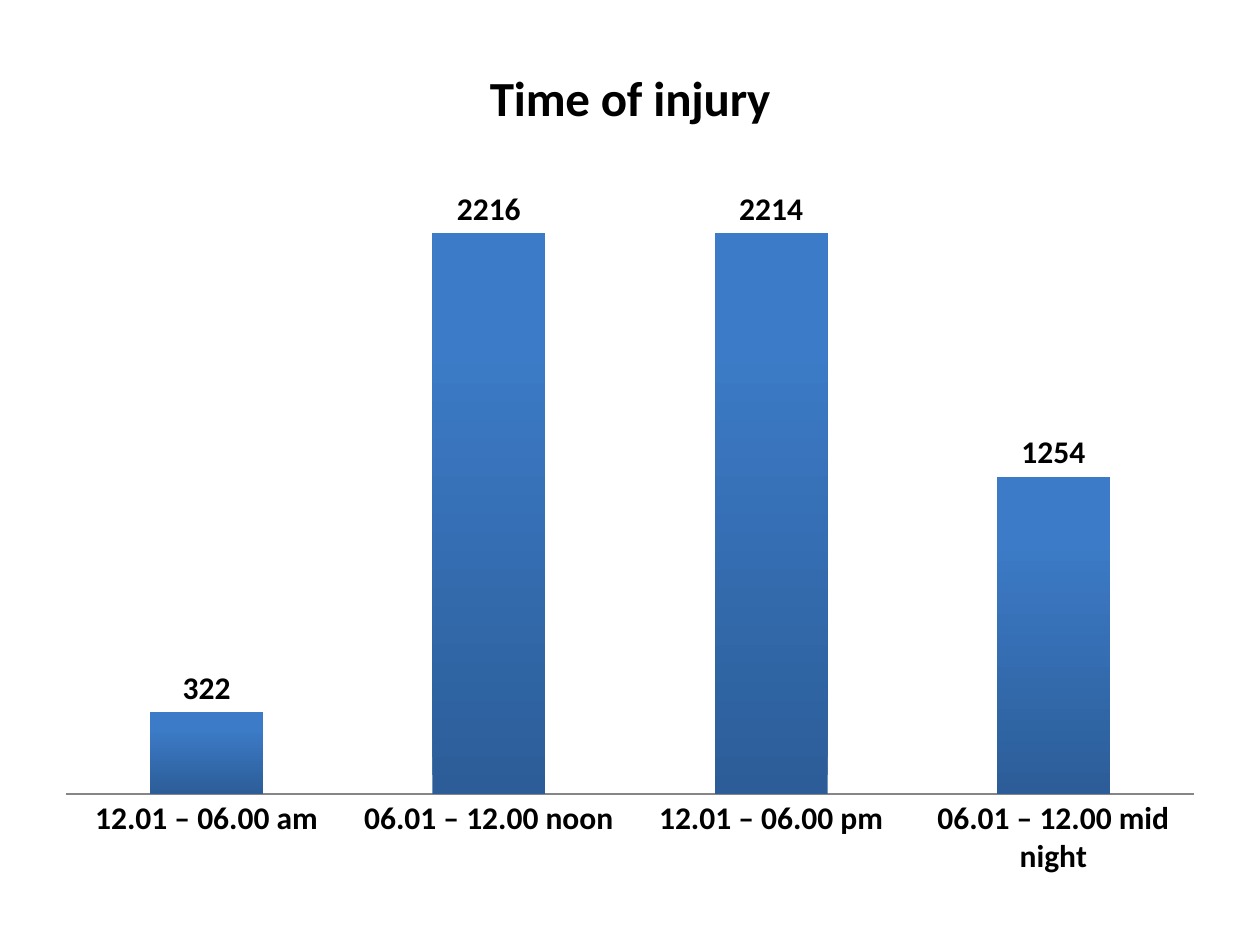
from pptx import Presentation
from pptx.chart.data import CategoryChartData
from pptx.dml.color import RGBColor
from pptx.enum.chart import XL_CHART_TYPE, XL_LABEL_POSITION, XL_TICK_MARK
from pptx.util import Pt

COLUMNS = XL_CHART_TYPE.COLUMN_CLUSTERED
ABOVE_BAR = XL_LABEL_POSITION.OUTSIDE_END
NO_TICK = XL_TICK_MARK.NONE

BLACK = "000000"
AXIS_GREY = "868686"
BAR_STOPS = [("2C5D98", 0), ("3C7BC7", 0.8)]
INJURIES = {
    "12.01 – 06.00 am": 322,
    "06.01 – 12.00 noon": 2216,
    "12.01 – 06.00 pm": 2214,
    "06.01 – 12.00 mid night": 1254,
}


def rgb(hex_code):
    return RGBColor.from_string(hex_code)


def style_font(font, size):
    font.name = "Calibri"
    font.size = Pt(size)
    font.bold = True
    font.color.rgb = rgb(BLACK)


def style_bars(plot):
    plot.gap_width = 150
    plot.overlap = -25
    plot.vary_by_categories = False
    fill = plot.series[0].format.fill
    fill.gradient()
    fill.gradient_angle = 90
    for stop, (colour, position) in zip(fill.gradient_stops, BAR_STOPS):
        stop.color.rgb = rgb(colour)
        stop.position = position

    labels = plot.series[0].data_labels
    labels.show_value = True
    labels.position = ABOVE_BAR
    style_font(labels.font, 18)


def style_axes(chart):
    times = chart.category_axis
    times.major_tick_mark = NO_TICK
    times.minor_tick_mark = NO_TICK
    times.format.line.color.rgb = rgb(AXIS_GREY)
    style_font(times.tick_labels.font, 18)

    counts = chart.value_axis
    counts.visible = False
    counts.has_major_gridlines = False
    counts.minimum_scale = 0
    counts.maximum_scale = 2500


def add_injury_chart(slide, left, top, width, height):
    injury_data = CategoryChartData()
    injury_data.categories = list(INJURIES)
    injury_data.add_series("Series 1", list(INJURIES.values()))
    chart = slide.shapes.add_chart(
        COLUMNS, Pt(left), Pt(top), Pt(width), Pt(height), injury_data
    ).chart
    chart.has_legend = False
    style_font(chart.font, 18)

    chart.has_title = True
    chart.chart_title.include_in_layout = False
    heading = chart.chart_title.text_frame.paragraphs[0].add_run()
    heading.text = "Time of injury"
    style_font(heading.font, 28)

    style_bars(chart.plots[0])
    style_axes(chart)


def main():
    prs = Presentation()
    prs.slide_width, prs.slide_height = Pt(720), Pt(540)
    slide = prs.slides.add_slide(prs.slide_layouts[6])
    add_injury_chart(slide, 24, 18, 672, 492)
    prs.save("out.pptx")


if __name__ == "__main__":
    main()
